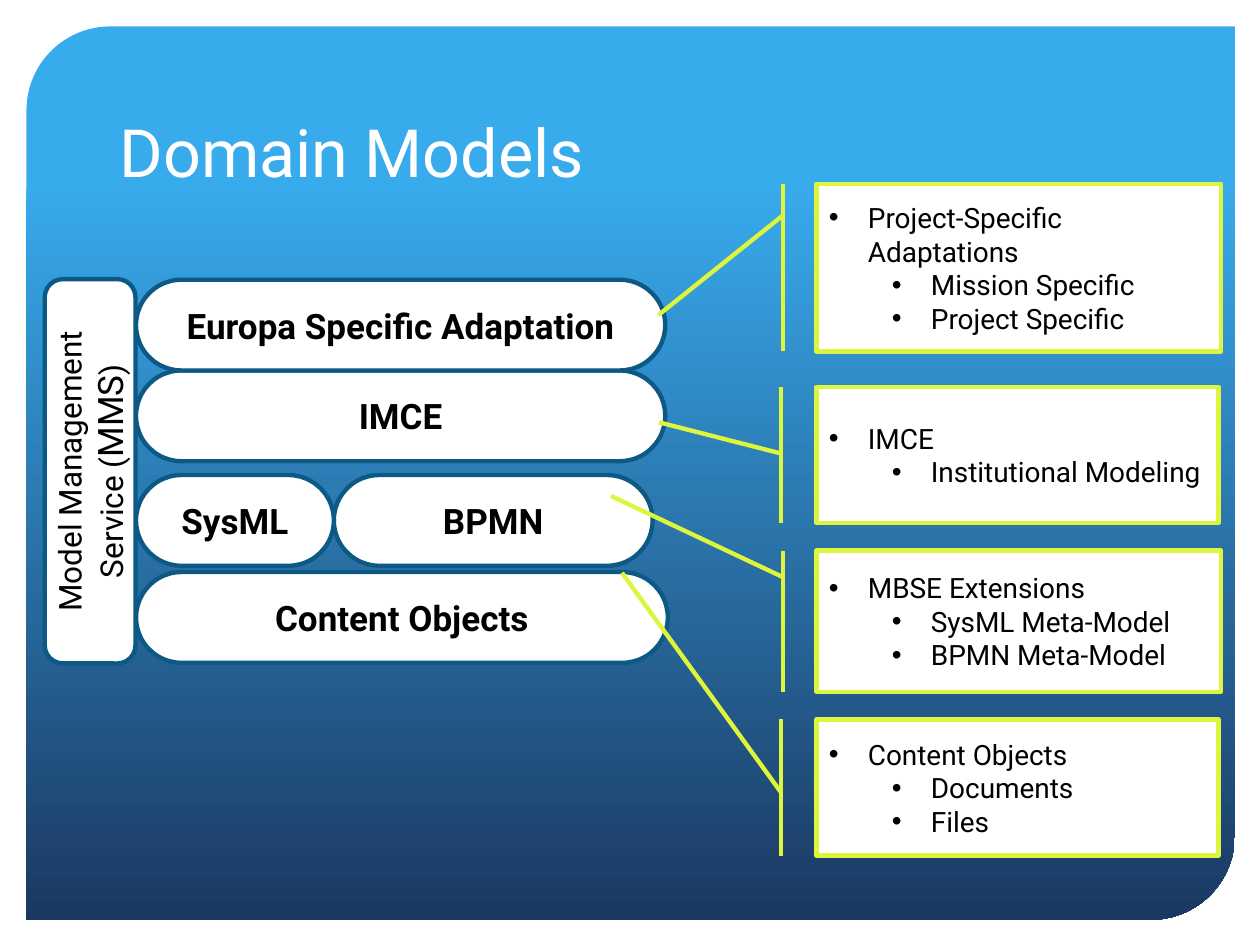
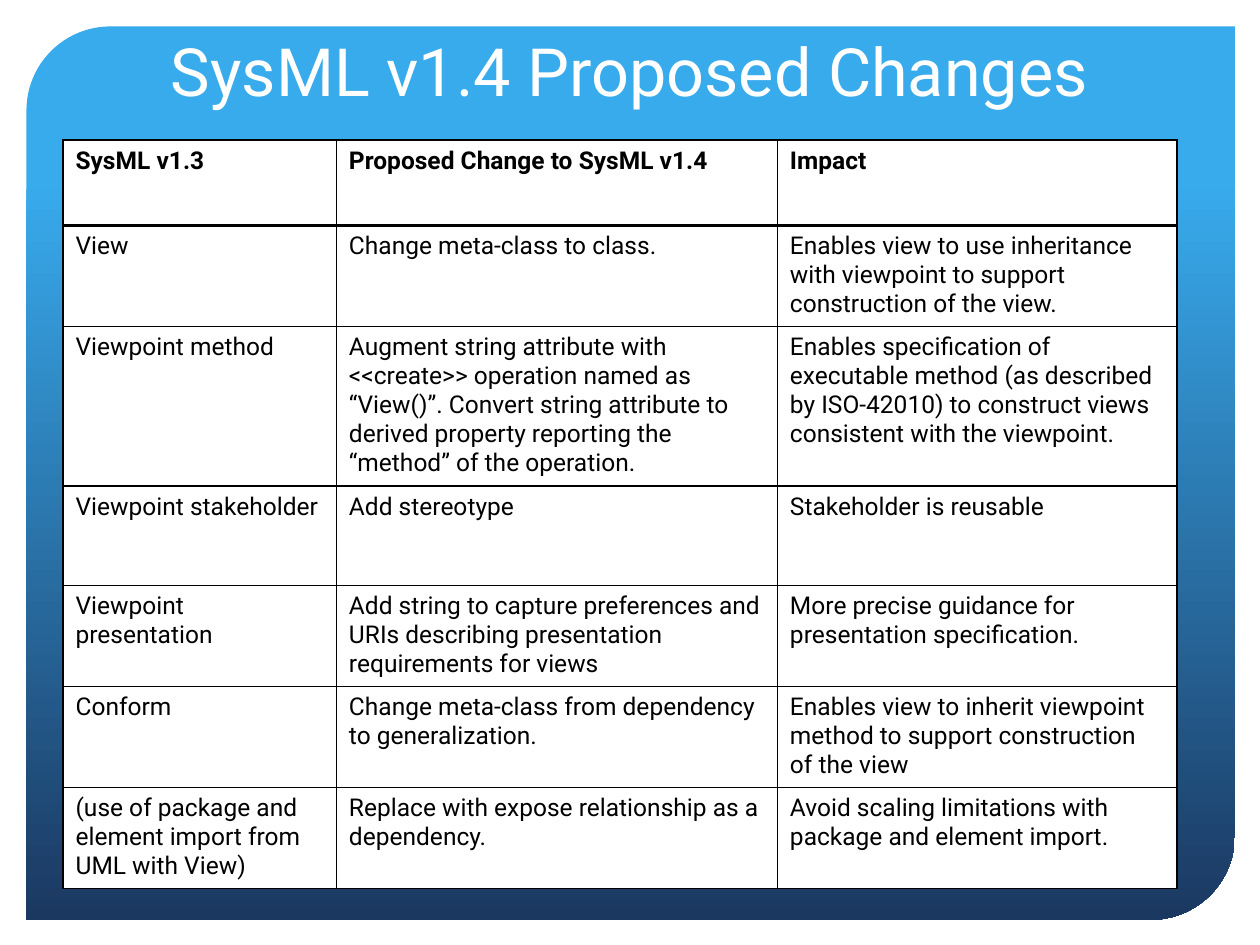
from dataclasses import dataclass
from typing import NamedTuple

from lxml import etree
from pptx import Presentation, util as u
from pptx.dml.color import RGBColor
from pptx.enum import shapes as kinds, text as t
from pptx.oxml import ns


@dataclass(frozen=True)
class Theme:
    font: str = "Roboto"
    paper: str = "FFFFFF"
    ink: str = "000000"
    sky: str = "38ABED"
    navy: str = "1B3861"
    layer_edge: str = "0C5986"
    callout_edge: str = "DDF53D"
    title: float = 38
    layer: float = 20
    service: float = 18
    note: float = 16
    cell: float = 14
    outline: float = 2.5


class Area(NamedTuple):
    """A place on the grid, in columns and rows."""
    left: float
    top: float
    width: float
    height: float


@dataclass(frozen=True)
class Layer:
    name: str
    left: float
    top: float
    width: float


@dataclass(frozen=True)
class Callout:
    """A note; pointer holds start y, start x, end y, end x as shares of its box."""
    topic: str
    details: tuple[str, ...]
    area: Area
    pointer: tuple[float, float, float, float]


THEME = Theme()
SLIDE_WIDTH, SLIDE_HEIGHT = u.Inches(10), u.Inches(7.5)
COLUMN, ROW = SLIDE_WIDTH / 100, SLIDE_HEIGHT / 75

PANEL = Area(2.1, 2.1, 95.9, 70.9)
LAYER_HEIGHT = 7.2
LAYER_LEFT = 10.8
SERVICE = Area(-8.1, 33.8, 30.5, LAYER_HEIGHT)
LAYERS = (
    Layer("BPMN", 26.5, 37.7, 25.3),
    Layer("SysML", LAYER_LEFT, 37.7, 15.7),
    Layer("Content Objects", LAYER_LEFT, 45.4, 42.2),
    Layer("IMCE", LAYER_LEFT, 29.4, 42),
    Layer("Europa Specific Adaptation", LAYER_LEFT, 22.2, 42),
)
CALLOUTS = (
    Callout("Project-Specific Adaptations", ("Mission Specific", "Project Specific"),
            Area(64.8, 14.6, 32.1, 13.3), (0.188, -0.083, 0.783, -0.391)),
    Callout("IMCE", ("Institutional Modeling",),
            Area(64.8, 30.7, 31.9, 10.8), (0.49, -0.088, 0.261, -0.392)),
    Callout("MBSE Extensions", ("SysML Meta-Model", "BPMN Meta-Model"),
            Area(64.8, 43.7, 32.1, 11.2), (0.188, -0.083, -0.387, -0.508)),
    Callout("Content Objects", ("Documents", "Files"),
            Area(64.8, 57.1, 31.9, 10.8), (0.533, -0.089, -1.078, -0.484)),
)
BULLET_HANG = 0.31
LEVEL_STEP = 0.5

CHANGES_AREA = Area(5, 11.1, 88.3, 58.4)
CHANGE_COLUMNS = (21.7, 35, 31.7)
CHANGE_ROWS = (6.8, 7.9, 12.5, 7.9, 7.9, 7.9, 7.9)
CHANGES = (
    ("SysML v1.3", "Proposed Change to SysML v1.4", "Impact"),
    ("View", "Change meta-class to class.",
     "Enables view to use inheritance with viewpoint to support construction of the view."),
    ("Viewpoint method",
     "Augment string attribute with <<create>> operation named as “View()”. Convert string "
     "attribute to derived property reporting the “method” of the operation.",
     "Enables specification of executable method (as described by ISO-42010) to construct "
     "views consistent with the viewpoint."),
    ("Viewpoint stakeholder", "Add stereotype", "Stakeholder is reusable"),
    ("Viewpoint presentation",
     "Add string to capture preferences and URIs describing presentation requirements for views",
     "More precise guidance for presentation specification."),
    ("Conform", "Change meta-class from dependency to generalization.",
     "Enables view to inherit viewpoint method to support construction of the view"),
    ("(use of package and element import from UML with View)",
     "Replace with expose relationship as a dependency.",
     "Avoid scaling limitations with package and element import."),
)


def rgb(code: str) -> RGBColor:
    return RGBColor.from_string(code)


def place(area: Area) -> tuple[int, int, int, int]:
    return (round(area.left * COLUMN), round(area.top * ROW),
            round(area.width * COLUMN), round(area.height * ROW))


def apply(target, values: dict) -> None:
    for attribute, value in values.items():
        setattr(target, attribute, value)


def write(paragraph, words: str, size: float, color: str = THEME.ink, bold: bool = False) -> None:
    run = paragraph.add_run()
    run.text = words
    apply(run.font, {"name": THEME.font, "size": u.Pt(size), "bold": bold})
    run.font.color.rgb = rgb(color)


def add_panel(slide) -> None:
    panel = slide.shapes.add_shape(kinds.MSO_SHAPE.ROUND_2_DIAG_RECTANGLE, *place(PANEL))
    panel.shadow.inherit = False
    panel.adjustments[0], panel.adjustments[1] = 0.094, 0
    panel.line.fill.background()
    panel.fill.gradient()
    panel.fill.gradient_angle = 270
    stops = ((0.17, THEME.sky), (1, THEME.navy))
    for stop, (position, color) in zip(panel.fill.gradient_stops, stops):
        stop.position = position
        stop.color.rgb = rgb(color)


def add_title(slide, words: str, area: Area, alignment) -> None:
    frame = slide.shapes.add_textbox(*place(area)).text_frame
    apply(frame, {"word_wrap": True, "vertical_anchor": t.MSO_ANCHOR.BOTTOM})
    frame.paragraphs[0].alignment = alignment
    write(frame.paragraphs[0], words, THEME.title, THEME.paper)


def add_box(slide, kind, area: Area, edge: str, adjustments: tuple[float, ...]):
    box = slide.shapes.add_shape(kind, *place(area))
    box.shadow.inherit = False
    box.fill.solid()
    box.fill.fore_color.rgb = rgb(THEME.paper)
    box.line.color.rgb = rgb(edge)
    box.line.width = u.Pt(THEME.outline)
    for index, value in enumerate(adjustments):
        box.adjustments[index] = value
    apply(box.text_frame, {"word_wrap": True, "vertical_anchor": t.MSO_ANCHOR.MIDDLE})
    box.text_frame.paragraphs[0].alignment = t.PP_ALIGN.CENTER
    return box


def add_service(slide) -> None:
    service = add_box(slide, kinds.MSO_SHAPE.ROUNDED_RECTANGLE, SERVICE, THEME.layer_edge, (0.2,))
    service.rotation = 270
    label = service.text_frame.paragraphs[0]
    for words, size in (("Model Management Service (", THEME.service),
                        ("MMS", THEME.layer), (")", THEME.service)):
        write(label, words, size)


def add_layer(slide, layer: Layer) -> None:
    area = Area(layer.left, layer.top, layer.width, LAYER_HEIGHT)
    pill = add_box(slide, kinds.MSO_SHAPE.ROUNDED_RECTANGLE, area, THEME.layer_edge, (0.5,))
    write(pill.text_frame.paragraphs[0], layer.name, THEME.layer, bold=True)


def set_bullet(paragraph, level: int) -> None:
    apply(paragraph, {"level": level, "alignment": t.PP_ALIGN.LEFT})
    properties = paragraph._p.get_or_add_pPr()
    properties.set("marL", str(u.Inches(BULLET_HANG + level * LEVEL_STEP)))
    properties.set("indent", str(-u.Inches(BULLET_HANG)))
    etree.SubElement(properties, ns.qn("a:buFont"), typeface="Arial")
    etree.SubElement(properties, ns.qn("a:buChar"), char="•")


def add_callout(slide, callout: Callout) -> None:
    box = add_box(slide, kinds.MSO_SHAPE.LINE_CALLOUT_1_BORDER_AND_ACCENT_BAR,
                  callout.area, THEME.callout_edge, callout.pointer)
    frame = box.text_frame
    for index, words in enumerate((callout.topic, *callout.details)):
        paragraph = frame.add_paragraph() if index else frame.paragraphs[0]
        set_bullet(paragraph, min(index, 1))
        write(paragraph, words, THEME.note)


def set_borders(cell, row: int) -> None:
    """Rule all four edges, with a heavier line under the header row."""
    properties = cell._tc.get_or_add_tcPr()
    widths = {"lnL": 1, "lnR": 1, "lnT": 2 if row == 1 else 1, "lnB": 2 if row == 0 else 1}
    for edge, width in widths.items():
        line = etree.SubElement(properties, ns.qn(f"a:{edge}"), w=str(u.Pt(width)))
        fill = etree.SubElement(line, ns.qn("a:solidFill"))
        etree.SubElement(fill, ns.qn("a:srgbClr"), val=THEME.ink)


def add_changes(slide) -> None:
    frame = slide.shapes.add_table(len(CHANGES), len(CHANGE_COLUMNS), *place(CHANGES_AREA))
    table = frame.table
    apply(table, {"first_row": False, "horz_banding": False})
    for column, width in zip(table.columns, CHANGE_COLUMNS):
        column.width = round(width * COLUMN)
    for row, height in zip(table.rows, CHANGE_ROWS):
        row.height = round(height * ROW)
    for row, change in enumerate(CHANGES):
        for column, words in enumerate(change):
            cell = table.cell(row, column)
            set_borders(cell, row)
            cell.fill.solid()
            cell.fill.fore_color.rgb = rgb(THEME.paper)
            write(cell.text_frame.paragraphs[0], words, THEME.cell, bold=row == 0)


def add_slide(deck, title: str, area: Area, alignment):
    slide = deck.slides.add_slide(deck.slide_layouts[6])
    add_panel(slide)
    add_title(slide, title, area, alignment)
    return slide


def main() -> None:
    deck = Presentation()
    apply(deck, {"slide_width": SLIDE_WIDTH, "slide_height": SLIDE_HEIGHT})

    models = add_slide(deck, "Domain Models", Area(8.5, 4.2, 82.9, 11.4), t.PP_ALIGN.LEFT)
    add_service(models)
    for layer in LAYERS:
        add_layer(models, layer)
    for callout in CALLOUTS:
        add_callout(models, callout)

    changes = add_slide(deck, "SysML v1.4 Proposed Changes",
                        Area(5, 2.5, 90, 6.7), t.PP_ALIGN.CENTER)
    add_changes(changes)
    deck.save("out.pptx")


if __name__ == "__main__":
    main()
